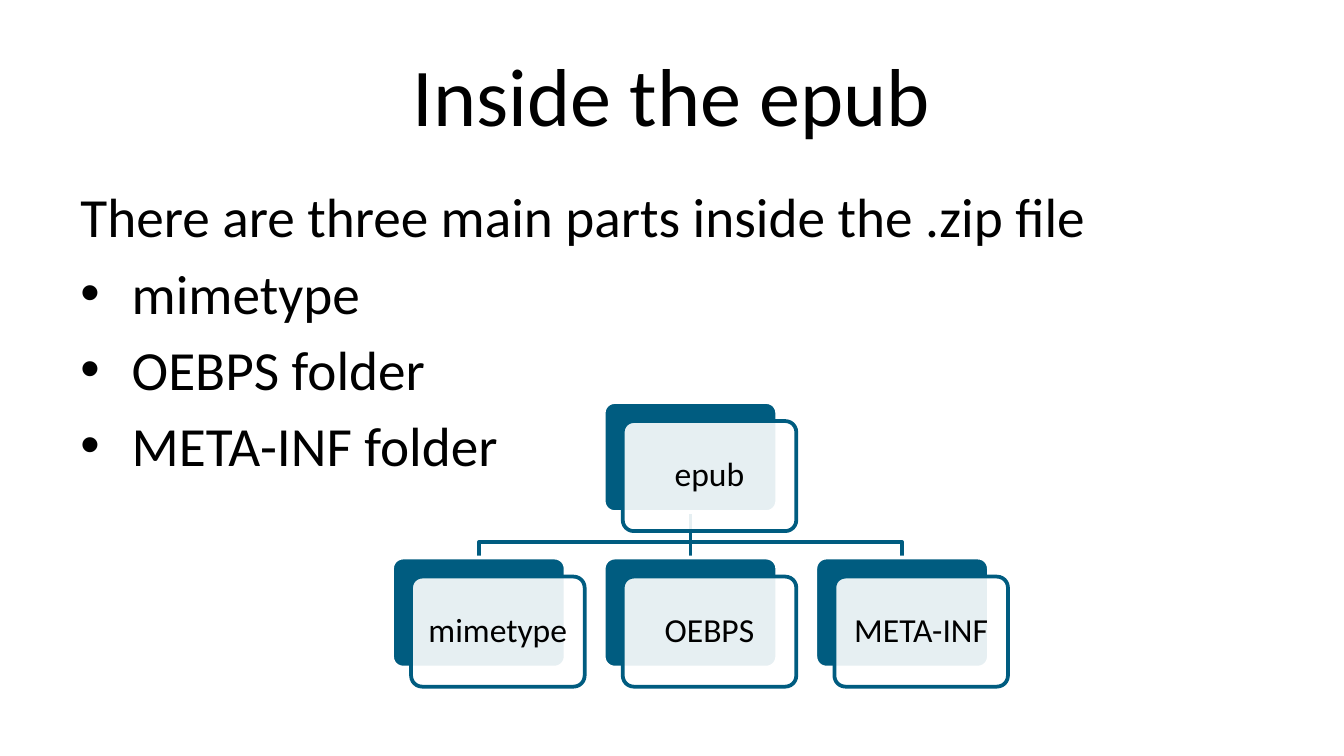
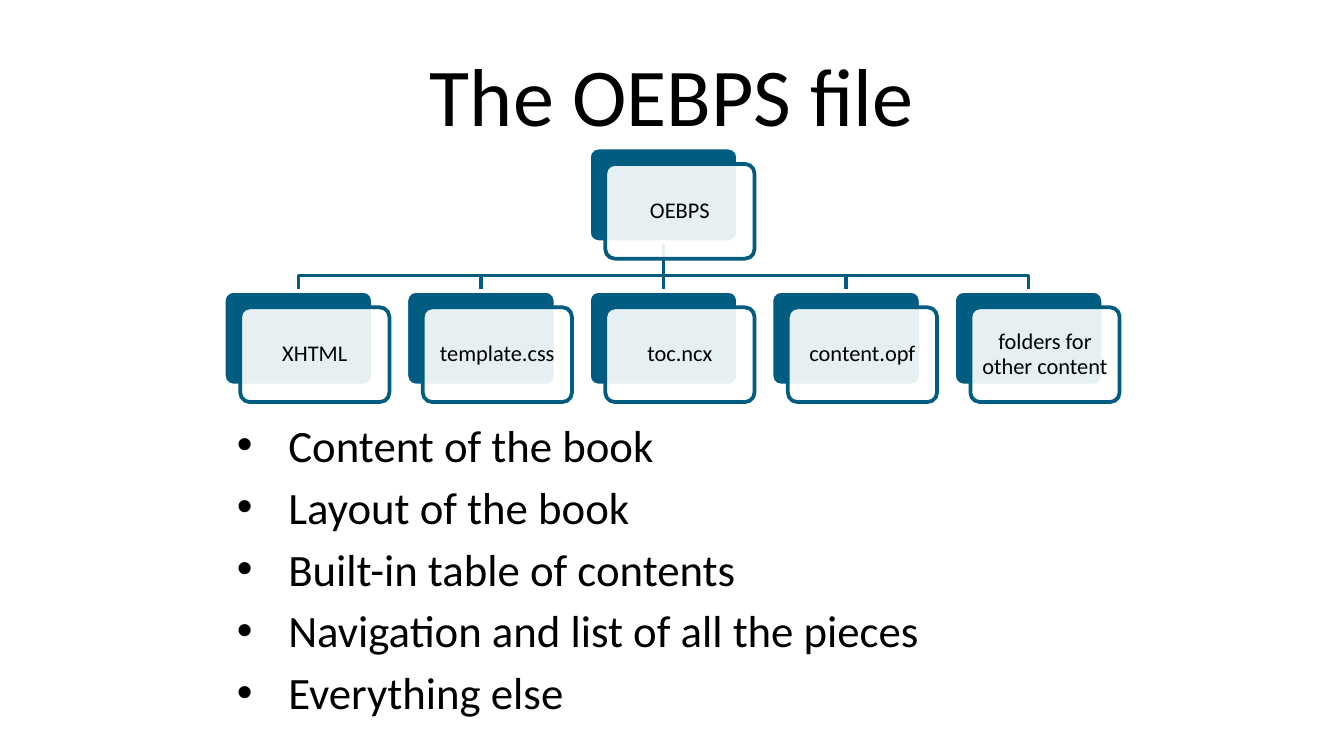
"""Build two slides on the parts of an epub, each with a tree and a list."""
import pptx
import pptx.util
import pptx.dml.color
import pptx.enum.shapes
import pptx.enum.text
import pptx.oxml.ns
from lxml import etree

Cm, Pt = pptx.util.Cm, pptx.util.Pt
RGB = pptx.dml.color.RGBColor.from_string
qn = pptx.oxml.ns.qn
align = pptx.enum.text.PP_ALIGN
middle = pptx.enum.text.MSO_ANCHOR.MIDDLE
round_box = pptx.enum.shapes.MSO_SHAPE.ROUNDED_RECTANGLE
straight = pptx.enum.shapes.MSO_CONNECTOR.STRAIGHT

hues = {"teal": "005C80", "white": "FFFFFF", "black": "000000"}
face = "Calibri"
indent = Cm(0.97)

pages = [
    {
        "title": "Inside the epub",
        "body": (1.27, 3.33, 22.86, 5.38),
        "size": 29.6,
        "lead": "There are three main parts inside the .zip file",
        "list": ["mimetype", "OEBPS folder", "META-INF folder"],
        "root": "epub",
        "kids": ["mimetype", "OEBPS", "META-INF"],
        "left": 7.41, "top": 7.6, "low": 10.54, "step": 4,
        "wide": 3.28, "high": 2.08, "shift": 0.36, "inset": 0.18, "small": 18,
    },
    {
        "title": "The OEBPS file",
        "body": (4.23, 7.77, 18.21, 6.5),
        "size": 24,
        "lead": "",
        "list": ["Content of the book", "Layout of the book",
                 "Built-in table of contents",
                 "Navigation and list of all the pieces", "Everything else"],
        "root": "OEBPS",
        "kids": ["XHTML", "template.css", "toc.ncx", "content.opf",
                 "folders for other content"],
        "left": 4.23, "top": 2.79, "low": 5.5, "step": 3.45,
        "wide": 2.82, "high": 1.79, "shift": 0.31, "inset": 0.12, "small": 12,
    },
]


def write(par, text, size, side=align.CENTER):
    par.alignment = side
    run = par.add_run()
    run.text = text
    run.font.name = face
    run.font.size = Pt(size)
    run.font.color.rgb = RGB(hues["black"])


def style(shape, fill, line):
    shape.shadow.inherit = False
    if fill:
        shape.fill.solid()
        shape.fill.fore_color.rgb = RGB(hues[fill])
    else:
        shape.fill.background()
    shape.line.color.rgb = RGB(hues[line])
    shape.line.width = Pt(2)


deck = pptx.Presentation()
deck.slide_width, deck.slide_height = Cm(25.4), Cm(14.29)

for page in pages:
    slide = deck.slides.add_slide(deck.slide_layouts[5])
    title = slide.shapes.title
    title.left, title.top = Cm(1.27), Cm(0.58)
    title.width, title.height = Cm(22.86), Cm(2.38)
    title.text_frame.vertical_anchor = middle
    write(title.text_frame.paragraphs[0], page["title"], 44)

    frame = slide.shapes.add_textbox(*map(Cm, page["body"])).text_frame
    frame.word_wrap = True
    lines = [page["lead"]] if page["lead"] else []
    for num, text in enumerate(lines + page["list"]):
        par = frame.add_paragraph() if num else frame.paragraphs[0]
        props = par._p.get_or_add_pPr()
        props.set("marL", str(indent))
        props.set("indent", str(-indent))
        if text not in lines:
            font = etree.SubElement(props, qn("a:buFont"))
            font.set("typeface", "Arial")
            etree.SubElement(props, qn("a:buChar")).set("char", "•")
        if num:
            par.space_before = Pt(round(page["size"] * 0.18, 1))
        write(par, text, page["size"], align.LEFT)

    tree = slide.shapes.add_group_shape().shapes
    wide, high, shift = page["wide"], page["high"], page["shift"]
    low = page["low"]
    kids = [(text, page["left"] + num * page["step"], low)
            for num, text in enumerate(page["kids"])]
    stem = kids[len(kids) // 2][1]
    mid, base, bus = stem + wide / 2, page["top"] + high, low - 0.29

    for text, left, top in kids:
        end = left + wide / 2
        if left == stem:
            link = tree.add_connector(straight, Cm(mid), Cm(base), Cm(mid), Cm(low))
            link.line.color.rgb = RGB(hues["teal"])
            link.line.width = Pt(2)
            etree.SubElement(link._element.spPr, qn("a:effectLst"))
        else:
            path = tree.build_freeform(Cm(mid), Cm(base))
            path.add_line_segments(
                [(Cm(mid), Cm(bus)), (Cm(end), Cm(bus)), (Cm(end), Cm(low))],
                close=False)
            style(path.convert_to_shape(), None, "teal")

    for text, left, top in [(page["root"], stem, page["top"])] + kids:
        back = tree.add_shape(round_box, Cm(left), Cm(top), Cm(wide), Cm(high))
        style(back, "teal", "white")
        card = tree.add_shape(round_box, Cm(left + shift), Cm(top + shift),
                              Cm(wide), Cm(high))
        style(card, "white", "teal")
        tint = card._element.spPr.find(qn("a:solidFill")).find(qn("a:srgbClr"))
        etree.SubElement(tint, qn("a:alpha")).set("val", "90000")
        back.adjustments[0] = card.adjustments[0] = 0.1
        frame = card.text_frame
        frame.word_wrap = True
        frame.vertical_anchor = middle
        frame.margin_left = frame.margin_right = Cm(page["inset"])
        frame.margin_top = frame.margin_bottom = Cm(page["inset"])
        frame.paragraphs[0].line_spacing = 0.9
        write(frame.paragraphs[0], text, page["small"])

deck.save("out.pptx")
